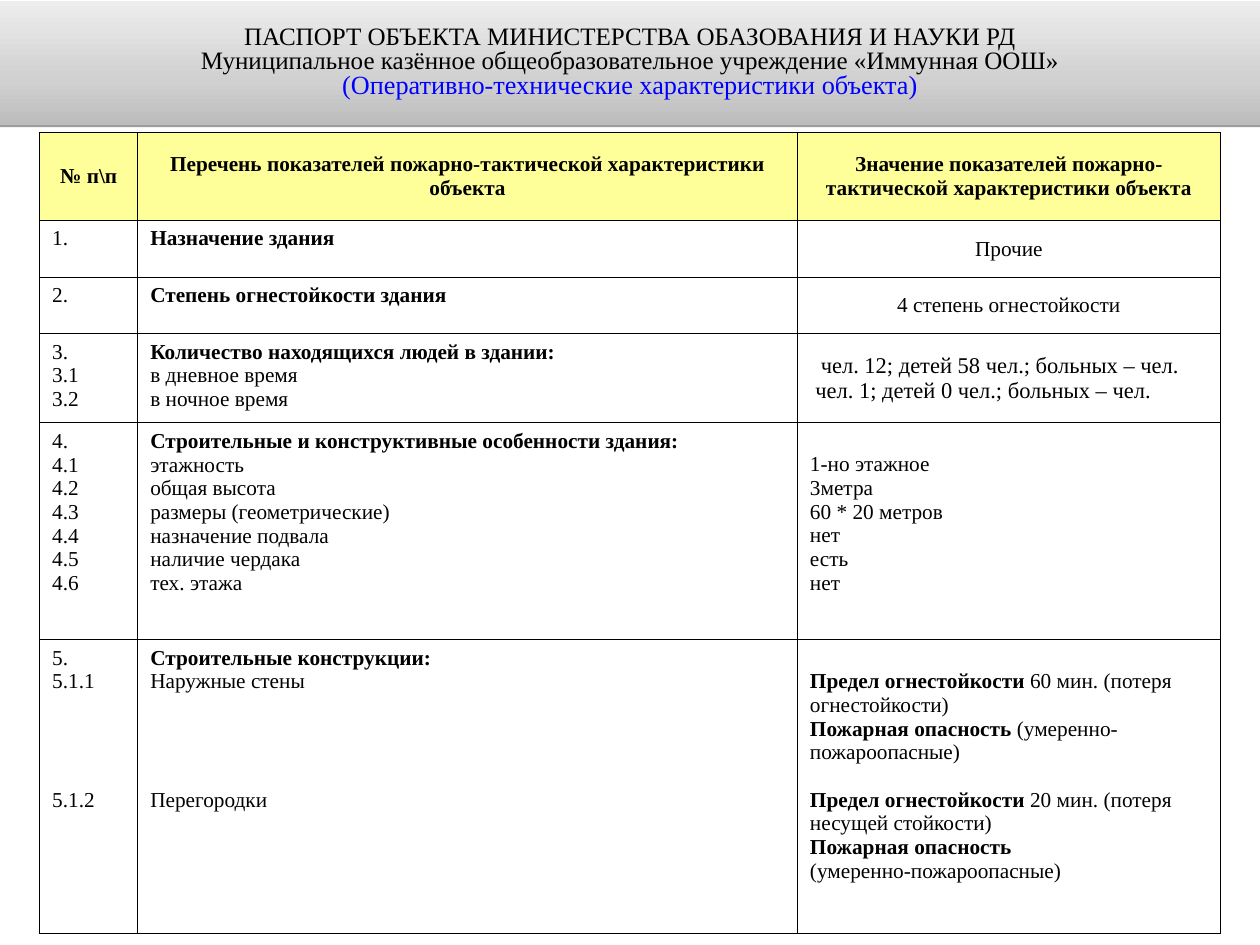
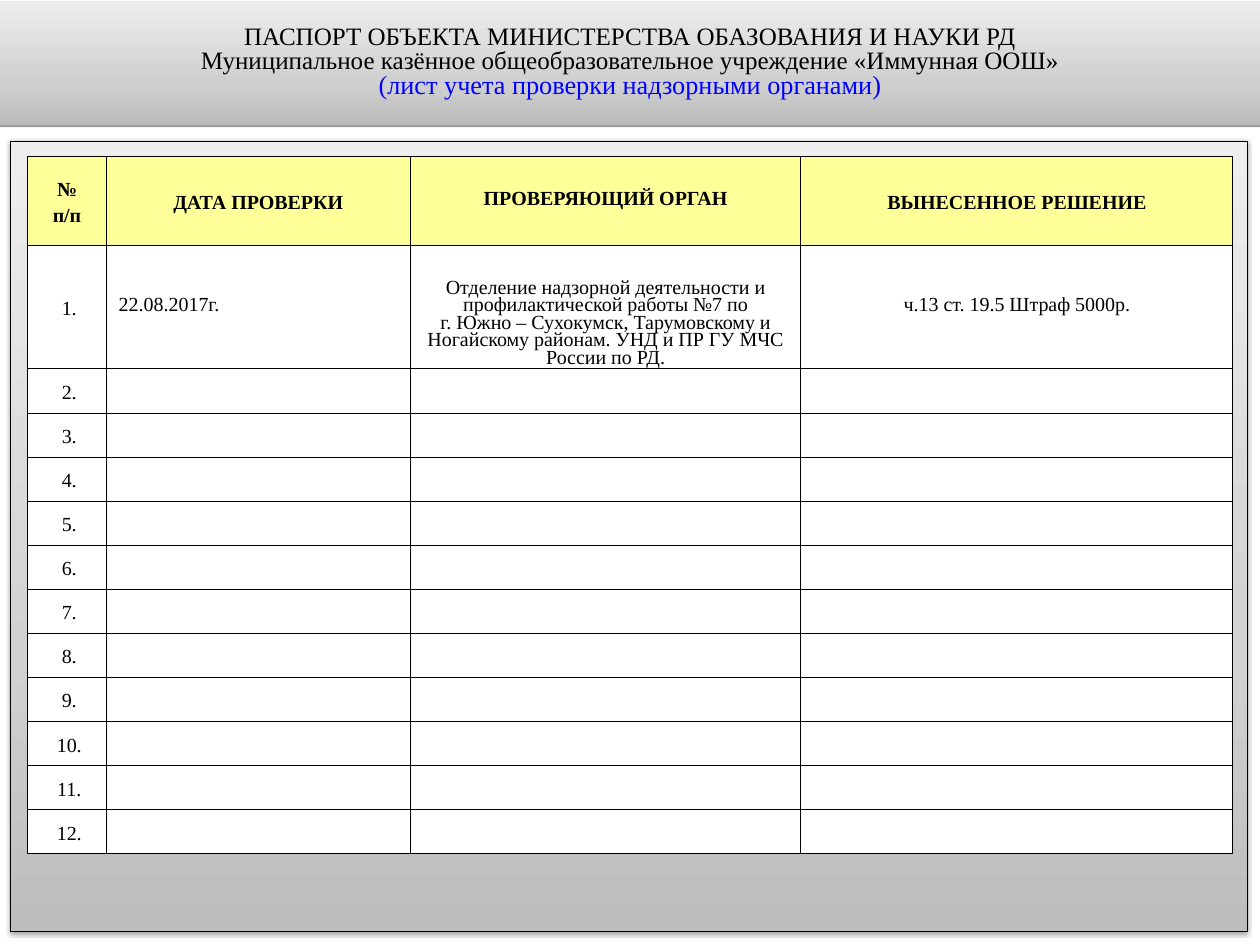
from copy import deepcopy

from lxml.etree import SubElement
from pptx import Presentation
from pptx.dml.color import RGBColor
from pptx.enum.shapes import MSO_SHAPE
from pptx.enum.text import MSO_ANCHOR, MSO_AUTO_SIZE, PP_ALIGN
from pptx.oxml import parse_xml
from pptx.oxml.ns import nsdecls, qn
from pptx.util import Inches, Pt

# Shared look
FONT = "Times New Roman"
BLACK, WHITE, BLUE, YELLOW = "000000", "FFFFFF", "0000FF", "FFFF99"
BAND_GREYS = ("BCBCBC", "D0D0D0", "EDEDED")
PANEL_GREYS = ("BDBDBD", "D1D1D1", "EEEEEE")
LEFT, CENTER = PP_ALIGN.LEFT, PP_ALIGN.CENTER
TOP, MIDDLE = MSO_ANCHOR.TOP, MSO_ANCHOR.MIDDLE
MINISTRY = "ПАСПОРТ ОБЪЕКТА МИНИСТЕРСТВА ОБАЗОВАНИЯ И НАУКИ РД"
SCHOOL = "Муниципальное казённое общеобразовательное учреждение «Иммунная ООШ»"


def rgb(color):
    return RGBColor.from_string(color)


def set_box(sp, box):
    sp.left, sp.top, sp.width, sp.height = (Inches(v) for v in box)


def set_margins(frame, left, top, right, bottom):
    frame.margin_left, frame.margin_top = Inches(left), Inches(top)
    frame.margin_right, frame.margin_bottom = Inches(right), Inches(bottom)


def format_run(r, size, color=BLACK, bold=False):
    r.font.name, r.font.size, r.font.bold = FONT, Pt(size), bold
    r.font.color.rgb = rgb(color)


def add_relief(sp, greys, blur):
    """Vertical grey gradient and a soft shadow below."""
    sp.fill.gradient()
    sp.fill.gradient_angle = 90
    stop_list = sp._element.spPr.find(".//" + qn("a:gsLst"))
    stop_list.append(deepcopy(stop_list[-1]))
    for stop, position, grey in zip(sp.fill.gradient_stops, (0, 0.35, 1), greys):
        stop.position, stop.color.rgb = position, rgb(grey)
    sp.shadow.inherit = False
    effects = sp._element.spPr.find(qn("a:effectLst"))
    shadow = SubElement(effects, qn("a:outerShdw"), blurRad=str(int(Pt(blur))),
                        dist=str(int(Pt(1.6))), dir="5400000", rotWithShape="0")
    color = SubElement(shadow, qn("a:srgbClr"), val=BLACK)
    SubElement(color, qn("a:alpha"), val="38000")


# Title band
def add_title_band(s, subtitle, box=(0, 0.01, 14, 1.38)):
    sp = s.shapes.title
    set_box(sp, box)
    add_relief(sp, BAND_GREYS, 0)
    tf = sp.text_frame
    tf.text = "\n".join((MINISTRY, SCHOOL, subtitle))
    tf.word_wrap, tf.auto_size = True, MSO_AUTO_SIZE.NONE
    tf.vertical_anchor = MIDDLE
    set_margins(tf, 0.12, 0.06, 0.12, 0.06)
    for p, size, color in zip(tf.paragraphs, (20, 20, 21), (BLACK, BLACK, BLUE)):
        p.alignment, p.line_spacing = CENTER, 0.8
        format_run(p.runs[0], size, color)


# Grey panel behind a table
def add_panel(s, box):
    sp = s.shapes.add_shape(MSO_SHAPE.RECTANGLE, *(Inches(v) for v in box))
    add_relief(sp, PANEL_GREYS, 3.1)
    sp.line.color.rgb, sp.line.width = rgb(BLACK), Pt(0.75)


# Tables
def add_grid(s, left, top, widths, heights, margins):
    """Add a ruled table with a yellow header row and white body."""
    table = s.shapes.add_table(
        len(heights), len(widths), Inches(left), Inches(top),
        Inches(sum(widths)), Inches(sum(heights))).table
    table.first_row = table.horz_banding = False
    for column, width in zip(table.columns, widths):
        column.width = Inches(width)
    for i, (row, height) in enumerate(zip(table.rows, heights)):
        row.height = Inches(height)
        for cell in row.cells:
            cell.fill.solid()
            cell.fill.fore_color.rgb = rgb(WHITE if i else YELLOW)
            set_margins(cell, *margins)
            for n, side in enumerate("LRTB"):
                cell._tc.get_or_add_tcPr().insert(n, parse_xml(
                    f'<a:ln{side} {nsdecls("a")} w="12700"><a:solidFill>'
                    f'<a:srgbClr val="{BLACK}"/></a:solidFill></a:ln{side}>'))
    return table


def write_cell(cell, lines, size, align=LEFT, anchor=TOP, spacing=None,
               indents=(), gaps=None, top=None):
    """Write one paragraph per line; the part before a "|" is bold."""
    cell.vertical_anchor = anchor
    if top is not None:
        cell.margin_top = Inches(top)
    tf = cell.text_frame
    for i, line in enumerate(lines):
        p = tf.add_paragraph() if i else tf.paragraphs[0]
        p.alignment = align
        if spacing:
            p.line_spacing = spacing
        if gaps and i in gaps:
            p.space_before = Pt(gaps[i])
        if i < len(indents):
            p._p.get_or_add_pPr().set("marL", str(int(Inches(indents[i]))))
        parts = line.split("|")
        for n, part in enumerate(parts):
            if part:
                r = p.add_run()
                r.text = part
                format_run(r, size, bold=n < len(parts) - 1)


# Slide 1: fire safety characteristics
LINE = 19  # height of one 17 pt line, in points
BELOW_HEADING = 0.33  # top margin that skips the heading line
CENTERED = {"align": CENTER, "anchor": MIDDLE}
HEADINGS = ("№ п\\п|", "Перечень показателей пожарно-тактической характеристики объекта|",
            "Значение показателей пожарно-тактической характеристики объекта|")
INDICATORS = [
    (["1."], ["Назначение здания|"], ["Прочие"]),
    (["2."], ["Степень огнестойкости здания|"], ["4 степень огнестойкости"]),
    (["3.", "3.1", "3.2"],
     ["Количество находящихся людей в здании:|", "в дневное время", "в ночное время"],
     ["чел. 12; детей 58 чел.; больных – чел.", "чел. 1; детей 0 чел.; больных – чел."]),
    (["4."] + [f"4.{n}" for n in range(1, 7)],
     ["Строительные и конструктивные особенности здания:|", "этажность", "общая высота",
      "размеры (геометрические)", "назначение подвала", "наличие чердака", "тех. этажа"],
     ["1-но этажное", "3метра", "60 * 20 метров", "нет", "есть", "нет"]),
    (["5.", "5.1.1", "5.1.2"],
     ["Строительные конструкции:|", "Наружные стены", "Перегородки"],
     ["Предел огнестойкости |60 мин. (потеря огнестойкости)",
      "Пожарная опасность |(умеренно-пожароопасные)",
      "Предел огнестойкости |20 мин. (потеря несущей стойкости)",
      "Пожарная опасность|", "(умеренно-пожароопасные)"]),
]
VALUE_STYLES = [
    {"size": 17, **CENTERED},
    {"size": 17, **CENTERED},
    {"size": 18, "anchor": MIDDLE, "indents": (0.12, 0.06)},
    {"size": 17, "top": BELOW_HEADING},
    {"size": 17, "top": BELOW_HEADING, "gaps": {2: LINE}},
]


def add_indicator_table(s, left, top):
    table = add_grid(s, left, top, (1.09, 7.33, 4.7),
                     (0.98, 0.63, 0.63, 0.99, 2.41, 3.26), (0.14, 0.07, 0.14, 0.07))
    for col, heading in enumerate(HEADINGS):
        write_cell(table.cell(0, col), [heading], 17, **CENTERED)
    for row, (indicator, style) in enumerate(zip(INDICATORS, VALUE_STYLES), 1):
        gaps = {2: 4 * LINE} if row == len(INDICATORS) else None
        for col in (0, 1):
            write_cell(table.cell(row, col), indicator[col], 17, gaps=gaps)
        write_cell(table.cell(row, 2), indicator[2], **style)


# Slide 2: inspection log
LOG_HEADINGS = [(["№|", "п/п|"], 1.15), (["ДАТА ПРОВЕРКИ|"], 1.15),
                (["ПРОВЕРЯЮЩИЙ ОРГАН|"], Pt(14)), (["ВЫНЕСЕННОЕ РЕШЕНИЕ|"], 1.15)]
AUTHORITY = ["Отделение надзорной деятельности и профилактической работы №7 по",
             "г. Южно – Сухокумск, Тарумовскому и Ногайскому районам. "
             "УНД и ПР ГУ МЧС России по РД."]
INSPECTIONS = 12


def add_inspection_table(s, left, top):
    table = add_grid(s, left, top, (0.87, 3.38, 4.34, 4.8),
                     [0.99, 1.37] + [0.49] * (INSPECTIONS - 1), (0.04, 0, 0.04, 0))
    for col, (lines, spacing) in enumerate(LOG_HEADINGS):
        write_cell(table.cell(0, col), lines, 16, spacing=spacing, **CENTERED)
    for n in range(1, INSPECTIONS + 1):
        write_cell(table.cell(n, 0), [f"{n}."], 16, spacing=1.15,
                   indents=(0.05,), **CENTERED)
    write_cell(table.cell(1, 1), ["22.08.2017г."], 16, anchor=MIDDLE,
               spacing=Pt(14), indents=(0.1,))
    write_cell(table.cell(1, 2), AUTHORITY, 16, spacing=Pt(14), top=0.39, **CENTERED)
    write_cell(table.cell(1, 3), ["ч.13 ст. 19.5 Штраф 5000р."], 16,
               spacing=Pt(14), **CENTERED)


def add_slide(prs, subtitle):
    s = prs.slides.add_slide(prs.slide_layouts[5])
    add_title_band(s, subtitle)
    return s


def main():
    prs = Presentation()
    prs.slide_width, prs.slide_height = Inches(14), Inches(10.5)

    s = add_slide(prs, "(Оперативно-технические характеристики объекта)")
    add_indicator_table(s, 0.44, 1.47)

    s = add_slide(prs, "(лист учета проверки надзорными органами)")
    add_panel(s, (0.12, 1.57, 13.74, 8.78))
    add_inspection_table(s, 0.31, 1.74)

    prs.save("out.pptx")


if __name__ == "__main__":
    main()
